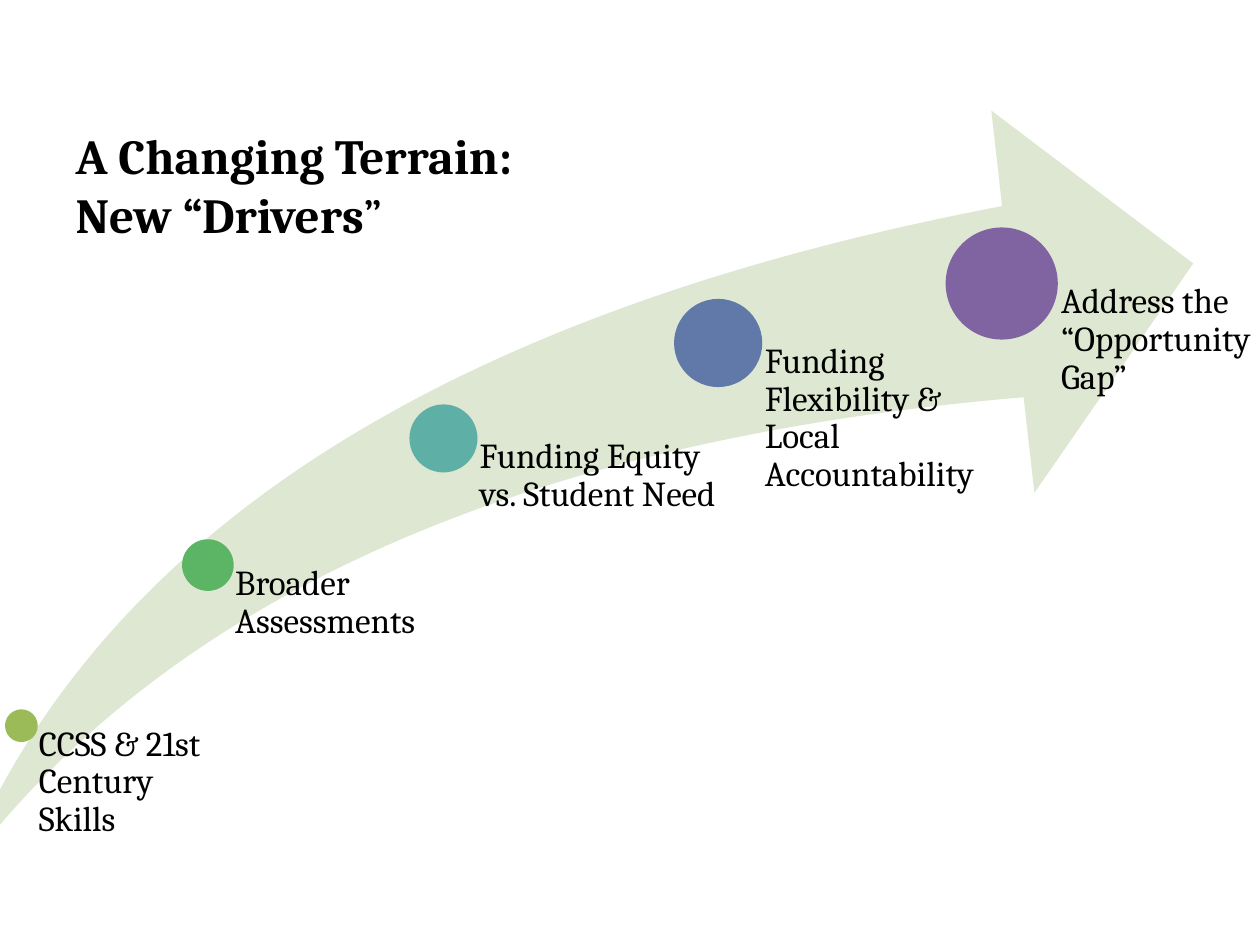
import pptx
import pptx.util
import pptx.dml.color
import pptx.enum.shapes
import pptx.enum.text

RGB = pptx.dml.color.RGBColor
SHAPE = pptx.enum.shapes.MSO_SHAPE
BLACK = RGB(0x00, 0x00, 0x00)
SAGE = RGB(0xDE, 0xE7, 0xD1)
OLIVE = RGB(0x9B, 0xBB, 0x59)
GREEN = RGB(0x5C, 0xB5, 0x65)
TEAL = RGB(0x5E, 0xAF, 0xA6)
BLUE = RGB(0x61, 0x79, 0xA8)
PURPLE = RGB(0x80, 0x64, 0xA2)
FONT = "Cambria"
WIDTH = pptx.util.Inches(10)
HEIGHT = pptx.util.Inches(7.5)
LABEL_BOTTOM = 0.992
INSET_PER_DIAMETER = 0.53

DRIVERS = [
    ("CCSS & 21st Century Skills", OLIVE, 0.017, 0.768, 0.026, 0.148),
    ("Broader Assessments", GREEN, 0.165, 0.598, 0.041, 0.187),
    ("Funding Equity vs. Student Need", TEAL, 0.352, 0.464, 0.054, 0.218),
    ("Funding Flexibility & Local Accountability", BLUE, 0.57, 0.363, 0.07, 0.226),
    ("Address the “Opportunity Gap”", PURPLE, 0.795, 0.3, 0.089, 0.226),
]


def across(share):
    """Return a share of the slide's width."""
    return pptx.util.Emu(int(WIDTH * share))


def down(share):
    """Return a share of the slide's height."""
    return pptx.util.Emu(int(HEIGHT * share))


def style_run(r, size, bold=False):
    """Apply the slide's font to a run."""
    r.font.name = FONT
    r.font.size = pptx.util.Pt(size)
    r.font.bold = bold
    r.font.color.rgb = BLACK


def add_title(s):
    """Place and format the title."""
    title = s.shapes.title
    title.left, title.top = across(0.05), down(0.123)
    title.width, title.height = across(0.9), down(0.144)
    p = title.text_frame.paragraphs[0]
    p.text = "A Changing Terrain:\vNew “Drivers"
    p.alignment = pptx.enum.text.PP_ALIGN.LEFT
    for r in p.runs:
        style_run(r, 28, True)
    quote = p.add_run()
    quote.text = "”"
    style_run(quote, 28)


def add_filled(s, kind, left, top, width, height, color):
    """Add a flat preset shape without outline."""
    sp = s.shapes.add_shape(kind, left, top, width, height)
    sp.shadow.inherit = False
    sp.fill.solid()
    sp.fill.fore_color.rgb = color
    sp.line.fill.background()
    return sp


def add_arrow(s):
    """Add the rising arrow behind the drivers."""
    sp = add_filled(s, SHAPE.SWOOSH_ARROW, across(-0.032), down(0.117),
                    across(0.979), down(0.809), SAGE)
    sp.adjustments[0] = 0.25
    sp.adjustments[1] = 0.25


def add_driver(s, text, color, x, y, diameter, width):
    """Add a dot centred on x, y and a label that starts at its centre."""
    d = across(diameter)
    add_filled(s, SHAPE.OVAL, across(x) - d // 2, down(y) - d // 2, d, d, color)
    sp = s.shapes.add_textbox(across(x), down(y), across(width), down(LABEL_BOTTOM - y))
    tf = sp.text_frame
    tf.word_wrap = True
    tf.margin_left = across(diameter * INSET_PER_DIAMETER)
    tf.margin_top = tf.margin_right = tf.margin_bottom = 0
    p = tf.paragraphs[0]
    p.text = text
    p.line_spacing = 0.9
    style_run(p.runs[0], 20)


def main():
    """Build and save the slide."""
    prs = pptx.Presentation()
    prs.slide_width, prs.slide_height = WIDTH, HEIGHT
    s = prs.slides.add_slide(prs.slide_layouts[5])
    add_arrow(s)
    for driver in DRIVERS:
        add_driver(s, *driver)
    add_title(s)
    prs.save("out.pptx")


if __name__ == "__main__":
    main()
